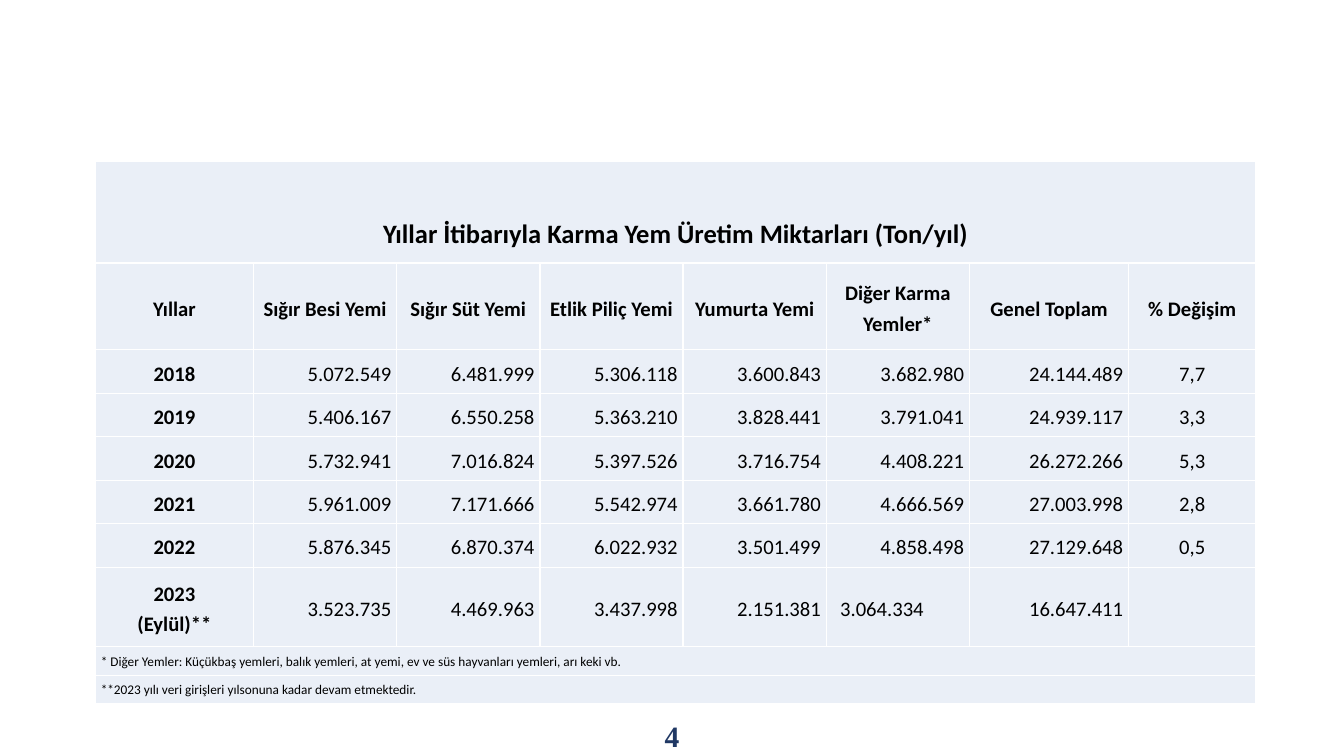
from dataclasses import dataclass
from typing import Any

from lxml import etree
from pptx import Presentation
from pptx.dml.color import RGBColor
from pptx.enum.text import MSO_ANCHOR, PP_ALIGN
from pptx.oxml.ns import qn
from pptx.util import Inches, Pt

LEFT, CENTER, RIGHT = PP_ALIGN.LEFT, PP_ALIGN.CENTER, PP_ALIGN.RIGHT
MIDDLE, BOTTOM = MSO_ANCHOR.MIDDLE, MSO_ANCHOR.BOTTOM

SLIDE_W, SLIDE_H = 12.67, 7.13
TABLE_LEFT, TABLE_TOP = 0.9, 1.52
COLUMNS = [1.49] + [1.35] * 5 + [1.5, 1.2]
ROWS = [0.96, 0.82] + [0.41] * 5 + [0.75] + [0.27] * 2
CELL_PAD = 0.05
CELL_FILL, BORDER, BLACK, NAVY = "EAEFF7", "FFFFFF", "000000", "203864"

TITLE = "Yıllar İtibarıyla Karma Yem Üretim Miktarları (Ton/yıl)"
HEADERS = ["Yıllar", "Sığır Besi Yemi", "Sığır Süt Yemi", "Etlik Piliç Yemi",
           "Yumurta Yemi", "Diğer Karma Yemler*", "Genel Toplam", "% Değişim"]
FOOTNOTES = [
    "* Diğer Yemler: Küçükbaş yemleri, balık yemleri, at yemi, "
    "ev ve süs hayvanları yemleri, arı keki vb.",
    "**2023 yılı veri girişleri yılsonuna kadar devam etmektedir.",
]


@dataclass
class Production:
    year: str
    tons: list[str]
    change: str


PRODUCTION = [
    Production("2018", ["5.072.549", "6.481.999", "5.306.118", "3.600.843",
                        "3.682.980", "24.144.489"], "7,7"),
    Production("2019", ["5.406.167", "6.550.258", "5.363.210", "3.828.441",
                        "3.791.041", "24.939.117"], "3,3"),
    Production("2020", ["5.732.941", "7.016.824", "5.397.526", "3.716.754",
                        "4.408.221", "26.272.266"], "5,3"),
    Production("2021", ["5.961.009", "7.171.666", "5.542.974", "3.661.780",
                        "4.666.569", "27.003.998"], "2,8"),
    Production("2022", ["5.876.345", "6.870.374", "6.022.932", "3.501.499",
                        "4.858.498", "27.129.648"], "0,5"),
    Production("2023\n(Eylül)**", ["3.523.735", "4.469.963", "3.437.998", "2.151.381",
                                   "3.064.334", "16.647.411"], ""),
]


def rgb(color: str) -> RGBColor:
    return RGBColor.from_string(color)


def write(tf: Any, text: str, *, size: float = 14, bold: bool = False,
          align: Any = CENTER, font: str = "Calibri", color: str = BLACK,
          spacing: float = 1.2) -> None:
    """Fill the first paragraph; a newline becomes a line break."""
    p = tf.paragraphs[0]
    p.alignment = align
    p.line_spacing = spacing
    for i, line in enumerate(text.split("\n")):
        if i:
            p.add_line_break()
        r = p.add_run()
        r.text = line
        r.font.name, r.font.size, r.font.bold = font, Pt(size), bold
        r.font.color.rgb = rgb(color)


def style_cell(cell: Any) -> None:
    """Set padding, white borders and fill."""
    cell.margin_left = cell.margin_right = Inches(CELL_PAD)
    cell.margin_top = cell.margin_bottom = 0
    cell.vertical_anchor = MIDDLE
    tc_pr = cell._tc.get_or_add_tcPr()
    for side in ("a:lnL", "a:lnR", "a:lnT", "a:lnB"):
        ln = etree.SubElement(tc_pr, qn(side), w=str(Pt(1)))
        fill = etree.SubElement(ln, qn("a:solidFill"))
        etree.SubElement(fill, qn("a:srgbClr"), val=BORDER)
    cell.fill.solid()
    cell.fill.fore_color.rgb = rgb(CELL_FILL)


def merge_row(table: Any, row: int) -> Any:
    cell = table.cell(row, 0)
    cell.merge(table.cell(row, len(COLUMNS) - 1))
    return cell


def add_production_table(s: Any) -> None:
    table = s.shapes.add_table(
        len(ROWS), len(COLUMNS), Inches(TABLE_LEFT), Inches(TABLE_TOP),
        Inches(sum(COLUMNS)), Inches(sum(ROWS))).table
    table.first_row = table.horz_banding = False
    for column, width in zip(table.columns, COLUMNS):
        column.width = Inches(width)
    for row, height in zip(table.rows, ROWS):
        row.height = Inches(height)
    for cell in table.iter_cells():
        style_cell(cell)

    title = merge_row(table, 0)
    title.vertical_anchor = BOTTOM
    title.margin_bottom = Inches(0.12)
    write(title.text_frame, TITLE, size=18, bold=True)

    for col, header in enumerate(HEADERS):
        write(table.cell(1, col).text_frame, header, bold=True)

    for row, item in enumerate(PRODUCTION, start=2):
        write(table.cell(row, 0).text_frame, item.year, bold=True)
        for col, tons in enumerate(item.tons, start=1):
            cell = table.cell(row, col)
            indented = tons == "3.064.334"
            if indented:
                cell.margin_left = Inches(0.13)
            write(cell.text_frame, tons, align=LEFT if indented else RIGHT)
        if item.change:
            write(table.cell(row, len(COLUMNS) - 1).text_frame, item.change)

    for row, note in enumerate(FOOTNOTES, start=len(ROWS) - len(FOOTNOTES)):
        write(merge_row(table, row).text_frame, note, size=9, align=LEFT, spacing=1.07)


def add_page_number(s: Any, number: str) -> None:
    width, height = 0.225 * SLIDE_W, 0.38
    tf = s.shapes.add_textbox(
        Inches((SLIDE_W - width) / 2), Inches(SLIDE_H - height),
        Inches(width), Inches(height)).text_frame
    tf.word_wrap = True
    tf.vertical_anchor = MIDDLE
    write(tf, number, size=20, bold=True, font="Times New Roman", color=NAVY, spacing=1.0)


def main() -> None:
    prs = Presentation()
    prs.slide_width, prs.slide_height = Inches(SLIDE_W), Inches(SLIDE_H)
    s = prs.slides.add_slide(prs.slide_layouts[6])
    add_production_table(s)
    add_page_number(s, "4")
    prs.save("out.pptx")


if __name__ == "__main__":
    main()
